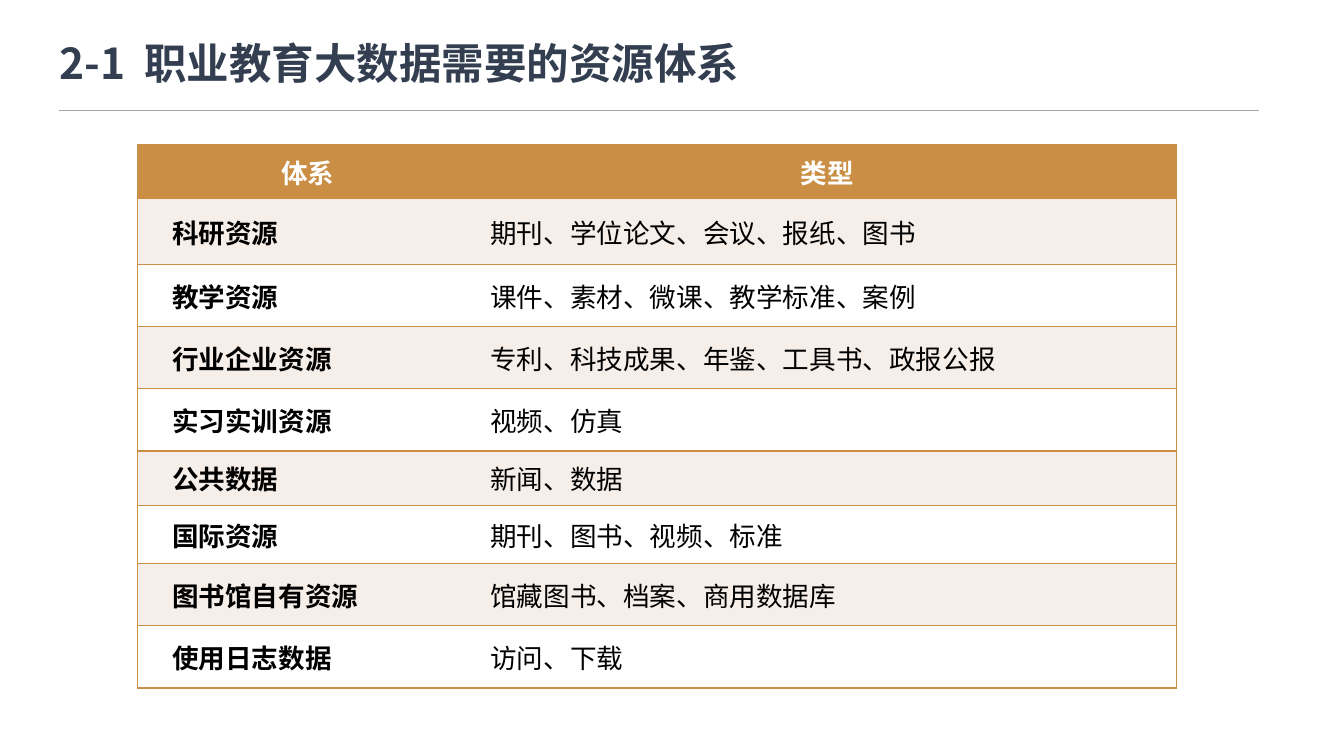
from typing import NamedTuple

from lxml import etree
from pptx import Presentation
from pptx.dml.color import RGBColor
from pptx.enum.shapes import MSO_CONNECTOR
from pptx.enum.text import MSO_ANCHOR, PP_ALIGN
from pptx.oxml.ns import qn
from pptx.util import Inches, Pt

STRAIGHT = MSO_CONNECTOR.STRAIGHT
MIDDLE = MSO_ANCHOR.MIDDLE
CENTER, JUSTIFY = PP_ALIGN.CENTER, PP_ALIGN.JUSTIFY

NAVY = RGBColor(0x33, 0x3F, 0x50)
GRAY = RGBColor(0xA6, 0xA6, 0xA6)
OCHRE = RGBColor(0xCA, 0x8F, 0x45)
CREAM = RGBColor(0xF6, 0xEE, 0xE9)
WHITE = RGBColor(0xFF, 0xFF, 0xFF)
BLACK = RGBColor(0x00, 0x00, 0x00)

CJK_FONT = "Noto Sans CJK SC"
LATIN_FONT = "Calibri"
COLUMN_WIDTHS = (3.27, 7.6)
SYSTEM_INDENT, TYPES_INDENT = 0.29, 0.35


class Resource(NamedTuple):
    system: str
    types: str
    height: float


HEADER = Resource("体系", "类型", 0.57)
RESOURCES = [
    Resource("科研资源", "期刊、学位论文、会议、报纸、图书", 0.69),
    Resource("教学资源", "课件、素材、微课、教学标准、案例", 0.65),
    Resource("行业企业资源", "专利、科技成果、年鉴、工具书、政报公报", 0.65),
    Resource("实习实训资源", "视频、仿真", 0.65),
    Resource("公共数据", "新闻、数据", 0.57),
    Resource("国际资源", "期刊、图书、视频、标准", 0.61),
    Resource("图书馆自有资源", "馆藏图书、档案、商用数据库", 0.65),
    Resource("使用日志数据", "访问、下载", 0.65),
]


def format_run(run, size: float, color: RGBColor, bold: bool, latin: str) -> None:
    run.font.size = Pt(size)
    run.font.bold = bold
    run.font.color.rgb = color
    run.font.name = latin
    east_asian = etree.Element(qn("a:ea"), typeface=CJK_FONT)
    run.font._element.find(qn("a:latin")).addnext(east_asian)


def add_title(slide) -> None:
    box = slide.shapes.add_textbox(Inches(0.62), Inches(0.38), Inches(7.6), Inches(0.54))
    frame = box.text_frame
    frame.word_wrap = True
    frame.vertical_anchor = MIDDLE
    frame.margin_left = frame.margin_right = frame.margin_top = frame.margin_bottom = 0
    number, gap, heading = (frame.paragraphs[0].add_run() for _ in range(3))
    number.text, gap.text, heading.text = "2-1", " ", "职业教育大数据需要的资源体系"
    for run in (number, gap, heading):
        format_run(run, 32, NAVY, True, CJK_FONT)
    gap.font._element.set("spc", "700")


def add_title_rule(slide) -> None:
    rule = slide.shapes.add_connector(
        STRAIGHT, Inches(0.62), Inches(1.15), Inches(13.17), Inches(1.15))
    rule.line.color.rgb = GRAY
    rule.line.width = Pt(0.5)
    etree.SubElement(rule._element.spPr, qn("a:effectLst"))


def set_borders(cell, hidden_side: str) -> None:
    """Outline the cell in ochre, leaving out the side shared with its neighbour."""
    properties = cell._tc.get_or_add_tcPr()
    for side in ("lnL", "lnR", "lnT", "lnB"):
        line = etree.SubElement(properties, qn(f"a:{side}"), w=str(Pt(1)))
        if side == hidden_side:
            etree.SubElement(line, qn("a:noFill"))
        else:
            fill = etree.SubElement(line, qn("a:solidFill"))
            etree.SubElement(fill, qn("a:srgbClr"), val=str(OCHRE))


def fill_cell(cell, text: str, indent: float, alignment: PP_ALIGN, background: RGBColor,
              color: RGBColor, bold: bool, hidden_side: str) -> None:
    set_borders(cell, hidden_side)
    cell.fill.solid()
    cell.fill.fore_color.rgb = background
    cell.vertical_anchor = MIDDLE
    cell.margin_left = cell.margin_right = Inches(0.07)
    cell.margin_top = cell.margin_bottom = 0
    paragraph = cell.text_frame.paragraphs[0]
    paragraph.text = text
    paragraph.alignment = alignment
    paragraph._p.get_or_add_pPr().set("indent", str(Inches(indent)))
    format_run(paragraph.runs[0], 20, color, bold, LATIN_FONT)


def add_resource_table(slide) -> None:
    rows = [HEADER, *RESOURCES]
    table = slide.shapes.add_table(
        len(rows), len(COLUMN_WIDTHS), Inches(1.44), Inches(1.51),
        Inches(sum(COLUMN_WIDTHS)), Inches(sum(row.height for row in rows))).table
    table.first_row = table.horz_banding = False
    for column, width in zip(table.columns, COLUMN_WIDTHS):
        column.width = Inches(width)
    for index, row in enumerate(rows):
        table.rows[index].height = Inches(row.height)
        is_header = row is HEADER
        if is_header:
            alignment, background, color = CENTER, OCHRE, WHITE
        else:
            alignment, background, color = JUSTIFY, CREAM if index % 2 else WHITE, BLACK
        types_indent = SYSTEM_INDENT if is_header else TYPES_INDENT
        fill_cell(table.cell(index, 0), row.system, SYSTEM_INDENT, alignment,
                  background, color, True, "lnR")
        fill_cell(table.cell(index, 1), row.types, types_indent, alignment,
                  background, color, is_header, "lnL")


def main() -> None:
    presentation = Presentation()
    presentation.slide_width = Inches(14.06)
    presentation.slide_height = Inches(7.91)
    slide = presentation.slides.add_slide(presentation.slide_layouts[6])
    add_title(slide)
    add_title_rule(slide)
    add_resource_table(slide)
    presentation.save("out.pptx")


if __name__ == "__main__":
    main()
